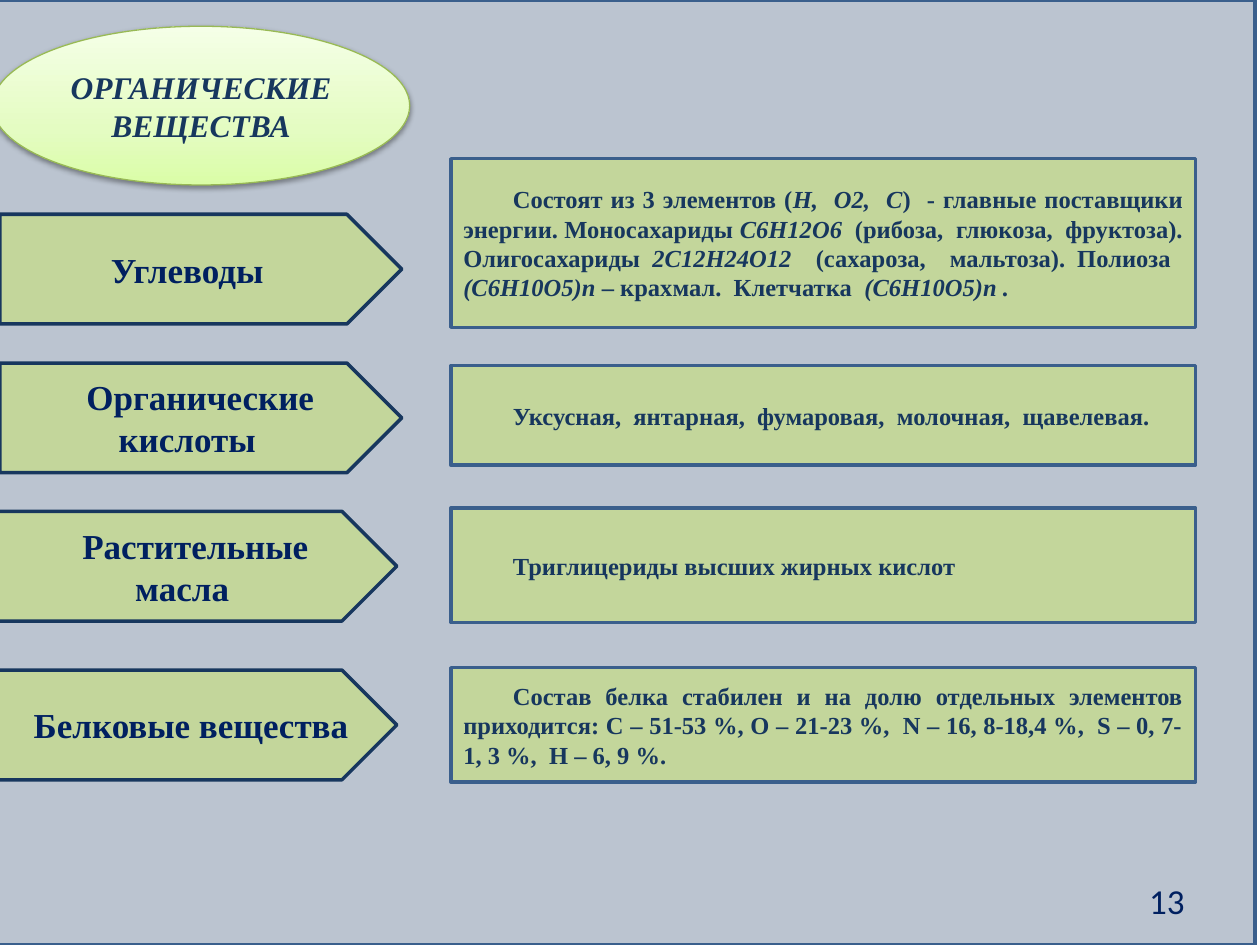
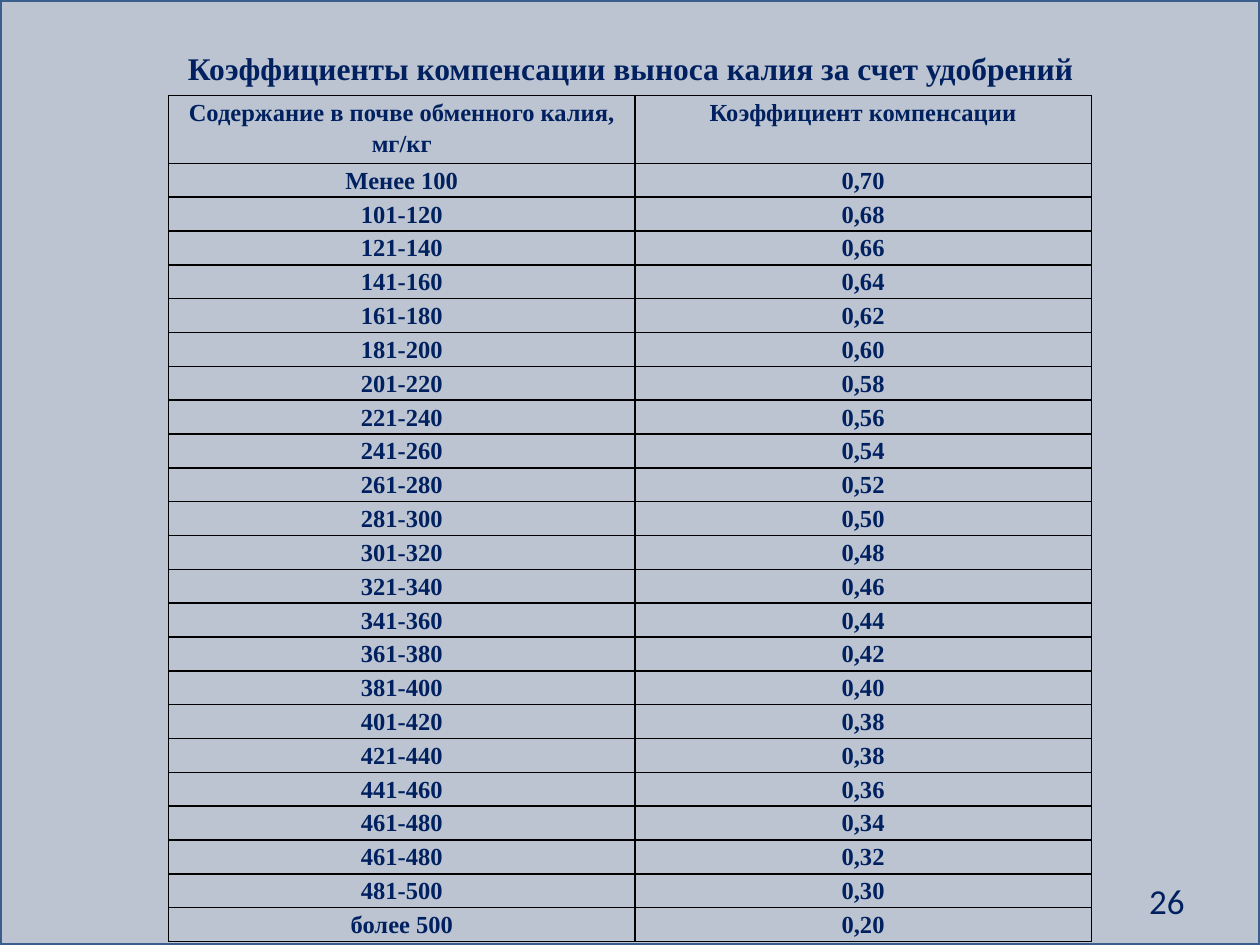
from copy import deepcopy
from dataclasses import dataclass

from lxml import etree
from pptx import Presentation
from pptx import util as u
from pptx.dml.color import RGBColor
from pptx.enum import shapes, text
from pptx.oxml import ns

Cm = u.Cm
Align = text.PP_ALIGN
Preset = shapes.MSO_SHAPE


@dataclass(frozen=True)
class Theme:
    navy: str = "17375E"
    ink: str = "002060"
    green: str = "C3D69B"
    border: str = "3A5F8C"
    black: str = "000000"
    oval_line: str = "98B955"
    oval_stops: tuple = ((0, "DAFDA7"), (0.35, "E4FCC2"), (1, "F5FFE7"))
    backdrop_opacity: int = 29
    serif: str = "Times New Roman"
    sans: str = "Calibri"
    title_size: int = 18
    label_size: int = 20
    body_size: int = 14
    line_width: float = 2
    line_spacing: float = 1.15


def add_element(parent, tag, **attributes):
    element = etree.SubElement(parent, ns.qn(tag))
    for name, value in attributes.items():
        element.set(name, str(value))
    return element


class Deck:
    def __init__(self, theme):
        self.theme = theme
        self.presentation = Presentation()
        self.presentation.slide_width = Cm(25.4)
        self.presentation.slide_height = Cm(19.05)
        self.slide = None

    def start_slide(self, number, left=0):
        theme = self.theme
        self.slide = self.presentation.slides.add_slide(self.presentation.slide_layouts[6])
        backdrop = self.shape(Preset.FLOWCHART_PROCESS, (left, 0, 25.4, 19.05),
                              theme.navy, theme.border)
        color = backdrop.fill._xPr.find(".//" + ns.qn("a:srgbClr"))
        add_element(color, "a:alpha", val=theme.backdrop_opacity * 1000)
        frame = self.text_box((18.21, 17.65, 5.92, 1.02), str(number))
        frame.vertical_anchor = text.MSO_ANCHOR.MIDDLE
        self.style(frame.paragraphs[0], theme.label_size, theme.ink, Align.RIGHT,
                   font=theme.sans, bold=False)

    def style(self, paragraph, size, color, align, font=None, bold=True, indent=0):
        paragraph.alignment = align
        if indent:
            properties = paragraph._p.get_or_add_pPr()
            properties.set("marL", "0")
            properties.set("indent", str(Cm(indent)))
        for run in paragraph.runs:
            run.font.name = font or self.theme.serif
            run.font.size = u.Pt(size)
            run.font.bold = bold
            run.font.color.rgb = RGBColor.from_string(color)

    def shape(self, preset, place, fill, line, width=None):
        shape = self.slide.shapes.add_shape(preset, *map(Cm, place))
        shape.shadow.inherit = False
        if fill:
            shape.fill.solid()
            shape.fill.fore_color.rgb = RGBColor.from_string(fill)
        shape.line.color.rgb = RGBColor.from_string(line)
        shape.line.width = u.Pt(width or self.theme.line_width)
        shape.text_frame.word_wrap = True
        return shape

    def text_box(self, place, content):
        frame = self.slide.shapes.add_textbox(*map(Cm, place)).text_frame
        frame.word_wrap = True
        frame.text = content
        return frame

    def title(self, content):
        theme = self.theme
        frame = self.text_box((2.11, 0.74, 21.21, 1.09), content)
        frame.auto_size = text.MSO_AUTO_SIZE.SHAPE_TO_FIT_TEXT
        paragraph = frame.paragraphs[0]
        paragraph.line_spacing = theme.line_spacing
        paragraph.space_after = u.Pt(10)
        self.style(paragraph, theme.title_size, theme.ink, Align.CENTER)

    def oval(self, place, content):
        theme = self.theme
        oval = self.shape(Preset.OVAL, place, None, theme.oval_line, 0.75)
        oval.fill.gradient()
        oval.fill.gradient_angle = 90
        stop_list = oval.fill._xPr.find(".//" + ns.qn("a:gsLst"))
        stop_list.insert(1, deepcopy(stop_list[0]))
        for stop, (position, color) in zip(oval.fill.gradient_stops, theme.oval_stops):
            stop.position = position
            stop.color.rgb = RGBColor.from_string(color)
        effects = oval._element.spPr.find(ns.qn("a:effectLst"))
        shadow = add_element(effects, "a:outerShdw", blurRad=u.Pt(3.1), dist=u.Pt(1.6),
                             dir=90 * 60000, rotWithShape=0)
        color = add_element(shadow, "a:srgbClr", val=theme.black)
        add_element(color, "a:alpha", val=38000)
        oval.text_frame.text = content
        paragraph = oval.text_frame.paragraphs[0]
        self.style(paragraph, theme.title_size, theme.navy, Align.CENTER)
        paragraph.runs[0].font.italic = True

    def arrow_label(self, left, top, content, align, indent):
        theme = self.theme
        arrow = self.shape(Preset.PENTAGON, (left, top, 8.1, 2.21), theme.green, theme.navy)
        arrow.text_frame.text = content
        self.style(arrow.text_frame.paragraphs[0], theme.label_size, theme.ink, align,
                   indent=indent)

    def description(self, top, height, content):
        theme = self.theme
        box = self.shape(Preset.RECTANGLE, (9.09, top, 15.01, height),
                         theme.green, theme.border)
        paragraph = box.text_frame.paragraphs[0]
        for index, part in enumerate(content.split("|")):
            run = paragraph.add_run()
            run.text = part
            run.font.italic = index % 2 == 1
        self.style(paragraph, theme.body_size, theme.navy, Align.JUSTIFY, indent=1)

    def table(self, left, top, column_widths, header_height, row_height, rows):
        heights = [header_height] + [row_height] * (len(rows) - 1)
        table = self.slide.shapes.add_table(
            len(rows), len(column_widths), Cm(left), Cm(top),
            Cm(sum(column_widths)), Cm(sum(heights))).table
        table.first_row = table.horz_banding = False
        for column, width in zip(table.columns, column_widths):
            column.width = Cm(width)
        for row, height, values in zip(table.rows, heights, rows):
            row.height = Cm(height)
            for cell, value in zip(row.cells, values):
                self.fill_cell(cell, value)

    def fill_cell(self, cell, value):
        theme = self.theme
        cell.text = value
        cell.fill.background()
        cell.margin_left = cell.margin_right = Cm(0.16)
        cell.margin_top = cell.margin_bottom = 0
        paragraph = cell.text_frame.paragraphs[0]
        paragraph.line_spacing = theme.line_spacing
        self.style(paragraph, theme.body_size, theme.ink, Align.CENTER)
        properties = cell._tc.get_or_add_tcPr()
        for index, side in enumerate("LRTB"):
            line = add_element(properties, "a:ln" + side, w=u.Pt(1))
            add_element(add_element(line, "a:solidFill"), "a:srgbClr", val=theme.black)
            properties.insert(index, line)


def build_organic_substances(deck):
    deck.start_slide(13, left=-0.1)
    deck.oval((-0.15, 0.53, 8.41, 3.2), "ОРГАНИЧЕСКИЕ ВЕЩЕСТВА")
    arrows = [
        (0, 4.32, "Углеводы", Align.CENTER, 0),
        (0, 7.32, "Органические кислоты", Align.CENTER, 0.53),
        (-0.1, 10.31, "Растительные масла", Align.CENTER, 0.53),
        (-0.1, 13.51, "Белковые вещества", Align.LEFT, 0.53),
    ]
    descriptions = [
        (3.2, 3.4, "Состоят из 3 элементов (|H,  О2,  C|)  - главные поставщики энергии. "
                   "Моносахариды |C6H12O6 | (рибоза,  глюкоза,  фруктоза). Олигосахариды "
                   "|2C12H24O12|  (сахароза,  мальтоза). Полиоза  |(C6H10O5)n |"
                   "– крахмал.  Клетчатка  |(C6H10O5)n ."),
        (7.37, 2.01, "Уксусная,  янтарная,  фумаровая,  молочная,  щавелевая."),
        (10.24, 2.31, "Триглицериды высших жирных кислот"),
        (13.46, 2.31, "Состав белка стабилен и на долю отдельных элементов приходится: "
                      "C – 51-53 %, O – 21-23 %,  N – 16, 8-18,4 %,  S – 0, 7-1, 3 %,  "
                      "H – 6, 9 %."),
    ]
    for arrow in arrows:
        deck.arrow_label(*arrow)
    for description in descriptions:
        deck.description(*description)


def build_potassium_table(deck):
    deck.start_slide(26)
    deck.title("Коэффициенты компенсации выноса калия за счет удобрений")
    range_starts = [*range(101, 462, 20), 461, 481]
    hundredths = [*range(68, 37, -2), *range(38, 29, -2)]
    rows = [
        ("Содержание в почве обменного калия, мг/кг", "Коэффициент компенсации"),
        ("Менее 100", "0,70"),
        *((f"{start}-{start + 19}", f"0,{value}")
          for start, value in zip(range_starts, hundredths)),
        ("более 500", "0,20"),
    ]
    deck.table(3.4, 1.93, (9.4, 9.2), 1.36, 0.68, rows)


def main():
    deck = Deck(Theme())
    build_organic_substances(deck)
    build_potassium_table(deck)
    deck.presentation.save("out.pptx")


if __name__ == "__main__":
    main()
